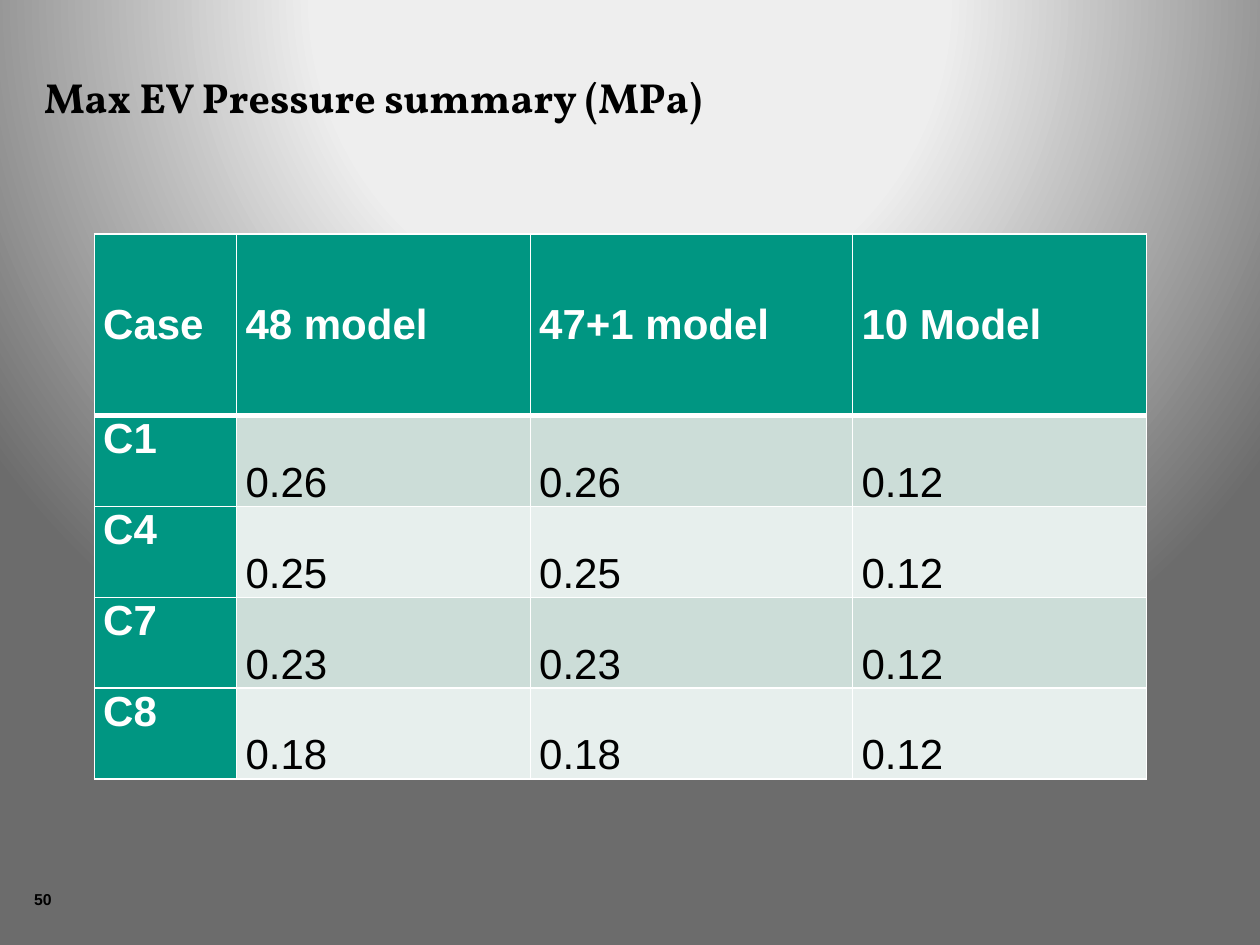
from dataclasses import dataclass

from pptx import Presentation
from pptx.dml.color import RGBColor
from pptx.enum.text import MSO_ANCHOR, PP_ALIGN
from pptx.oxml import parse_xml
from pptx.oxml.ns import nsdecls
from pptx.slide import Slide
from pptx.table import _Cell
from pptx.text.text import TextFrame
from pptx.util import Cm, Pt

TOP, MIDDLE, BOTTOM = MSO_ANCHOR.TOP, MSO_ANCHOR.MIDDLE, MSO_ANCHOR.BOTTOM
LEFT, JUSTIFY = PP_ALIGN.LEFT, PP_ALIGN.JUSTIFY
BLANK_LAYOUT = 6


@dataclass(frozen=True)
class Theme:
    title_font: str = "Vollkorn"
    body_font: str = "Arial"
    large: int = 24
    small: int = 9
    dark: str = "000000"
    light: str = "FFFFFF"
    accent: str = "009682"
    bands: tuple[str, str] = ("CCDDD8", "E7EFED")
    thin: int = 1
    thick: int = 3
    backdrop: tuple[tuple[int, str], ...] = (
        (0, "F1F1F1"), (40, "EEEEEE"), (100, "6C6C6C"))


@dataclass(frozen=True)
class TextStyle:
    font: str
    size: int
    color: str
    bold: bool = True
    alignment: PP_ALIGN = LEFT


@dataclass(frozen=True)
class Label:
    text: str
    left: float
    top: float
    width: float
    height: float
    anchor: MSO_ANCHOR
    style: TextStyle


THEME = Theme()
LABELS = (
    Label("50", 0.69, 17.93, 0.91, 0.61, TOP,
          TextStyle(THEME.body_font, THEME.small, THEME.dark)),
    Label("Max EV Pressure summary (MPa)", 0.89, 0.91, 24, 1.55, BOTTOM,
          TextStyle(THEME.title_font, THEME.large, THEME.dark)),
)
PRESSURES = (
    ("Case", "48 model", "47+1 model", "10 Model"),
    ("C1", "0.26", "0.26", "0.12"),
    ("C4", "0.25", "0.25", "0.12"),
    ("C7", "0.23", "0.23", "0.12"),
    ("C8", "0.18", "0.18", "0.12"),
)
COLUMN_WIDTHS = (2.87, 5.92, 6.5, 5.92)
HEADER_HEIGHT, ROW_HEIGHT = 3.66, 1.83
TABLE_LEFT, TABLE_TOP = 1.9, 4.72
CELL_MARGIN = 0.18


def paint_background(slide: Slide) -> None:
    stops = "".join(
        f'<a:gs pos="{position * 1000}"><a:srgbClr val="{color}"/></a:gs>'
        for position, color in THEME.backdrop)
    background = parse_xml(
        f'<p:bg {nsdecls("p", "a")}><p:bgPr><a:gradFill rotWithShape="1">'
        f'<a:gsLst>{stops}</a:gsLst><a:path path="circle">'
        '<a:fillToRect l="50000" t="-80000" r="50000" b="180000"/></a:path>'
        '</a:gradFill><a:effectLst/></p:bgPr></p:bg>')
    slide.element.cSld.insert(0, background)


def write_text(text_frame: TextFrame, text: str, style: TextStyle) -> None:
    text_frame.text = text
    paragraph = text_frame.paragraphs[0]
    paragraph.alignment = style.alignment
    font = paragraph.runs[0].font
    font.name, font.size, font.bold = style.font, Pt(style.size), style.bold
    font.color.rgb = RGBColor.from_string(style.color)


def add_label(slide: Slide, label: Label) -> None:
    shape = slide.shapes.add_textbox(
        Cm(label.left), Cm(label.top), Cm(label.width), Cm(label.height))
    text_frame = shape.text_frame
    text_frame.word_wrap = True
    text_frame.vertical_anchor = label.anchor
    text_frame.margin_left = text_frame.margin_right = 0
    text_frame.margin_top = text_frame.margin_bottom = 0
    write_text(text_frame, label.text, label.style)


def set_borders(cell: _Cell, top: int, bottom: int) -> None:
    properties = cell._tc.get_or_add_tcPr()
    widths = {"lnL": THEME.thin, "lnR": THEME.thin, "lnT": top, "lnB": bottom}
    for index, (side, width) in enumerate(widths.items()):
        properties.insert(index, parse_xml(
            f'<a:{side} {nsdecls("a")} w="{Pt(width)}"><a:solidFill>'
            f'<a:srgbClr val="{THEME.light}"/></a:solidFill></a:{side}>'))


def format_cell(cell: _Cell, text: str, row: int, column: int) -> None:
    is_header, is_heading = row == 0, row == 0 or column == 0
    write_text(cell.text_frame, text, TextStyle(
        THEME.body_font, THEME.large,
        THEME.light if is_heading else THEME.dark, is_heading, JUSTIFY))
    cell.vertical_anchor = MIDDLE if is_header else TOP if is_heading else BOTTOM
    cell.margin_left = cell.margin_right = Cm(CELL_MARGIN)
    cell.margin_top = cell.margin_bottom = 0
    cell.fill.solid()
    cell.fill.fore_color.rgb = RGBColor.from_string(
        THEME.accent if is_heading else THEME.bands[(row - 1) % 2])
    set_borders(cell, THEME.thick if row == 1 else THEME.thin,
                THEME.thick if is_header else THEME.thin)


def add_pressure_table(slide: Slide) -> None:
    heights = [HEADER_HEIGHT] + [ROW_HEIGHT] * (len(PRESSURES) - 1)
    table = slide.shapes.add_table(
        len(PRESSURES), len(COLUMN_WIDTHS), Cm(TABLE_LEFT), Cm(TABLE_TOP),
        Cm(sum(COLUMN_WIDTHS)), Cm(sum(heights))).table
    table.first_col = True
    for column, width in zip(table.columns, COLUMN_WIDTHS):
        column.width = Cm(width)
    for row, height in zip(table.rows, heights):
        row.height = Cm(height)
    for row_index, values in enumerate(PRESSURES):
        for column_index, value in enumerate(values):
            format_cell(table.cell(row_index, column_index), value,
                        row_index, column_index)


def main() -> None:
    presentation = Presentation()
    presentation.slide_width, presentation.slide_height = Cm(25.4), Cm(19.05)
    slide = presentation.slides.add_slide(
        presentation.slide_layouts[BLANK_LAYOUT])
    paint_background(slide)
    for label in LABELS:
        add_label(slide, label)
    add_pressure_table(slide)
    presentation.save("out.pptx")


if __name__ == "__main__":
    main()
